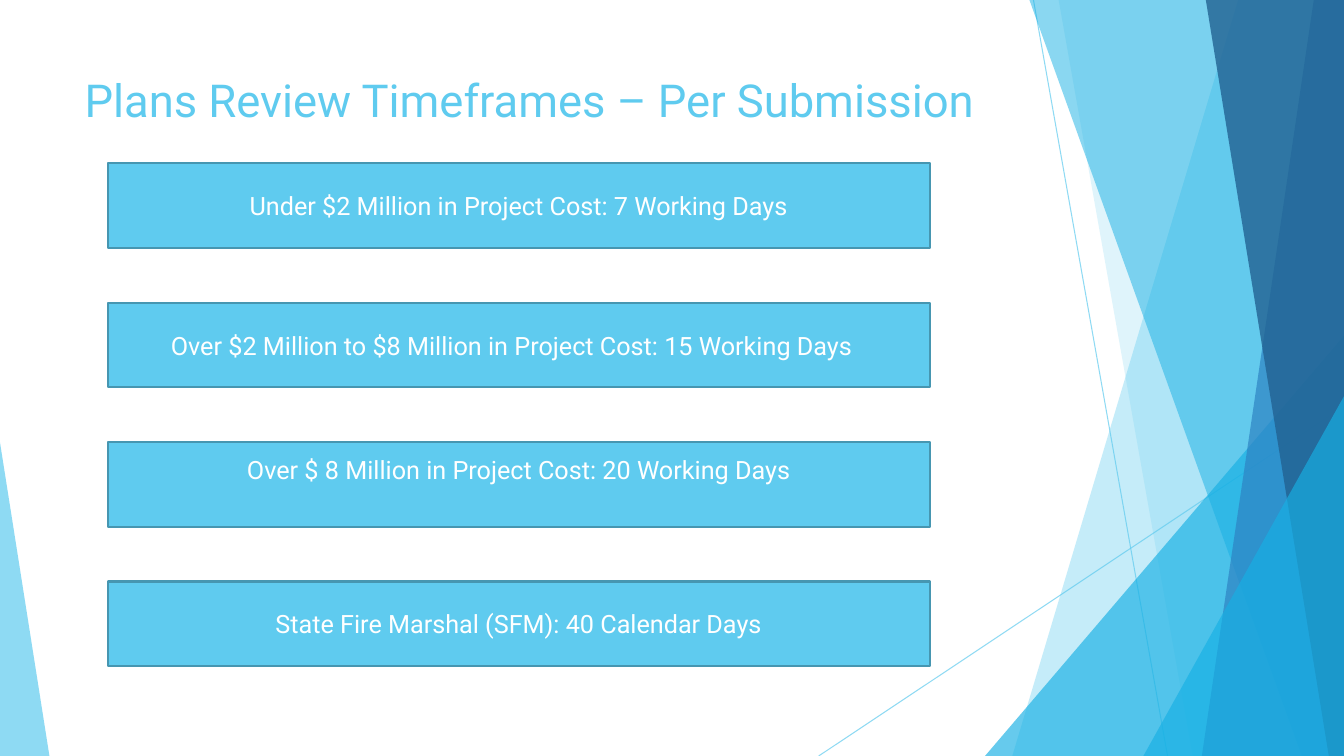
"""Build the plans review timeframes slide."""
from dataclasses import dataclass

from lxml.etree import SubElement
from pptx import Presentation
from pptx.dml.color import RGBColor
from pptx.enum.shapes import MSO_CONNECTOR as CONN, MSO_SHAPE as SHAPE
from pptx.enum.text import MSO_ANCHOR as ANCHOR, PP_ALIGN as ALIGN
from pptx.oxml.ns import qn
from pptx.util import Inches, Pt


@dataclass(frozen=True)
class Theme:
    font: str = "Roboto"
    title_size: float = 32.4
    bar_size: float = 18
    sky: str = "5FCBEF"
    cyan: str = "17B0E4"
    blue: str = "2E83C3"
    navy: str = "226292"
    edge: str = "4696B1"
    white: str = "FFFFFF"


THEME = Theme()
WIDTH, HEIGHT = 13.33, 7.5

TITLE = "Plans Review Timeframes – Per Submission"
TITLE_BOX = (0.74, 0.67, 9.4, 0.93)

# text, extra right inset, extra bottom inset
BARS = [
    ("Under $2 Million in Project Cost: 7 Working Days", 0, 0),
    ("Over $2 Million to $8 Million in Project Cost: 15 Working Days", 0.14, 0),
    ("Over $ 8 Million in Project Cost: 20 Working Days", 0, 0.29),
    ("State Fire Marshal (SFM): 40 Calendar Days", 0, 0),
]
BAR_LEFT, BAR_TOP, BAR_WIDTH, BAR_HEIGHT, BAR_STEP = 1.07, 1.62, 8.15, 0.84, 1.383
INSET_X, INSET_Y = 0.1, 0.05

RAYS = [((10.25, 0), (11.58, HEIGHT)), ((WIDTH, 4.03), (8.12, HEIGHT))]
RAY_OPACITY = 70

FACETS = [
    ("band", (12.28, 10.04), THEME.sky, 36),
    ("band", (10.5, 11.83), THEME.sky, 20),
    ("triangle", (9.77, 3.33, 3.56, 1), THEME.cyan, 66),
    ("band", (10.21, 12.91), THEME.cyan, 50),
    ("band", (13.03, 11.92), THEME.blue, 70),
    ("band", (11.96, 13.18), THEME.navy, 80),
    ("triangle", (11.34, 3.93, 1.99, 1), THEME.cyan, 66),
    ("triangle", (0, 4.39, 0.49, 0), THEME.sky, 70),
]


def rgb(color):
    return RGBColor.from_string(color)


def set_opacity(sp, percent):
    color = next(sp._element.spPr.iter(qn("a:srgbClr")))
    SubElement(color, qn("a:alpha"), val=str(percent * 1000))


def set_fill(sp, color):
    sp.shadow.inherit = False
    sp.fill.solid()
    sp.fill.fore_color.rgb = rgb(color)
    sp.line.fill.background()


def add_ray(shapes, start, end):
    ray = shapes.add_connector(CONN.STRAIGHT, *map(Inches, start + end))
    ray.line.color.rgb = rgb(THEME.sky)
    ray.line.width = Pt(0.75)
    set_opacity(ray, RAY_OPACITY)
    SubElement(ray._element.spPr, qn("a:effectLst"))


def add_band(shapes, top_x, bottom_x):
    builder = shapes.build_freeform(Inches(top_x), 0)
    corners = [(WIDTH, 0), (WIDTH, HEIGHT), (bottom_x, HEIGHT)]
    builder.add_line_segments([(Inches(x), Inches(y)) for x, y in corners])
    return builder.convert_to_shape()


def add_triangle(shapes, left, top, width, apex):
    box = (left, top, width, HEIGHT - top)
    sp = shapes.add_shape(SHAPE.ISOSCELES_TRIANGLE, *map(Inches, box))
    sp.adjustments[0] = apex
    return sp


def write(sp, text, size, color, align, anchor, right=0, bottom=0):
    tf = sp.text_frame
    tf.word_wrap = True
    tf.vertical_anchor = anchor
    tf.margin_left, tf.margin_top = Inches(INSET_X), Inches(INSET_Y)
    tf.margin_right, tf.margin_bottom = Inches(INSET_X + right), Inches(INSET_Y + bottom)
    p = tf.paragraphs[0]
    p.alignment = align
    r = p.add_run()
    r.text = text
    r.font.name = THEME.font
    r.font.size = Pt(size)
    r.font.color.rgb = rgb(color)


def add_bar(shapes, row, text, right, bottom):
    box = (BAR_LEFT, BAR_TOP + row * BAR_STEP, BAR_WIDTH, BAR_HEIGHT)
    sp = shapes.add_shape(SHAPE.RECTANGLE, *map(Inches, box))
    set_fill(sp, THEME.sky)
    sp.line.color.rgb = rgb(THEME.edge)
    sp.line.width = Pt(1.5)
    write(sp, text, THEME.bar_size, THEME.white, ALIGN.CENTER, ANCHOR.MIDDLE, right, bottom)


def main():
    prs = Presentation()
    prs.slide_width, prs.slide_height = Inches(WIDTH), Inches(HEIGHT)
    shapes = prs.slides.add_slide(prs.slide_layouts[6]).shapes
    for start, end in RAYS:
        add_ray(shapes, start, end)
    makers = {"band": add_band, "triangle": add_triangle}
    for kind, geometry, color, opacity in FACETS:
        sp = makers[kind](shapes, *geometry)
        set_fill(sp, color)
        set_opacity(sp, opacity)
    title = shapes.add_textbox(*map(Inches, TITLE_BOX))
    write(title, TITLE, THEME.title_size, THEME.sky, ALIGN.LEFT, ANCHOR.TOP)
    for row, bar in enumerate(BARS):
        add_bar(shapes, row, *bar)
    prs.save("out.pptx")


if __name__ == "__main__":
    main()
